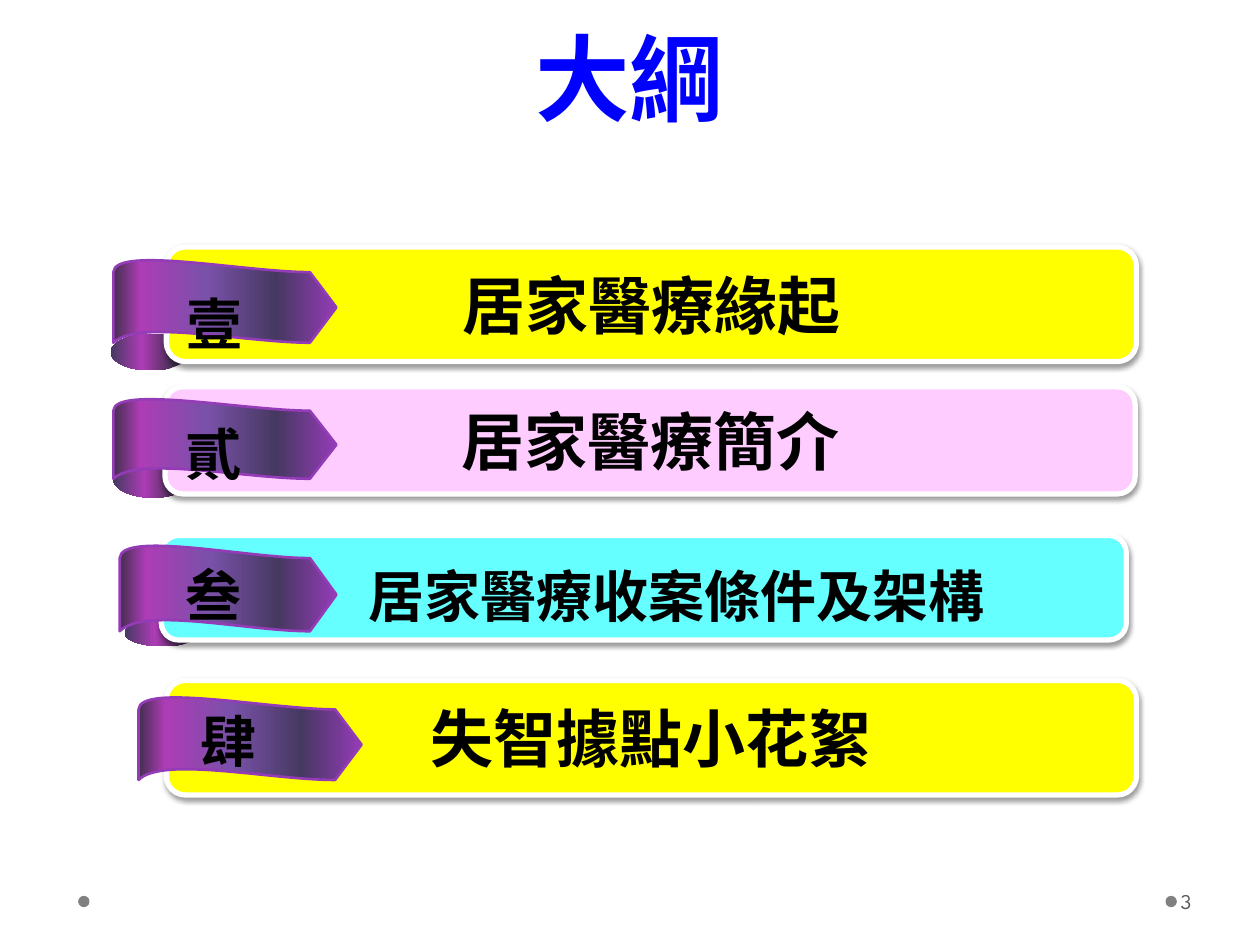
from lxml import etree
from pptx import Presentation
from pptx.dml.color import RGBColor
from pptx.enum.shapes import MSO_SHAPE as Preset
from pptx.enum.text import MSO_ANCHOR as Anchor, MSO_AUTO_SIZE as AutoSize, PP_ALIGN as Align
from pptx.oxml.ns import qn
from pptx.util import Inches, Pt

COLORS = {
    "title": "0000FF", "text": "000000", "page": "595959", "dot": "808080",
    "yellow": "FFFF00", "pink": "FFCCFF", "cyan": "66FFFF", "edge": "FFFFFF",
    "ribbon_edge": "943BB7",
}
CURL_STOPS = [(21, "432E4E"), (61, "AD3CB6"), (100, "463961")]
RIBBON_STOPS = [(0, "943BB7"), (27, "463961"), (58, "7951A9"),
                (88, "AD3CB6"), (100, "432E4E")]
CJK_FONT = "Noto Sans CJK SC"
CREST = 0.09

TOPICS = [
    dict(heading="居家醫療緣起", color="yellow", bar=(1.32, 1.96, 7.7, 0.91),
         curl=(0.88, 2.65, 0.63, 0.29), ribbon=(0.9, 2.07, 1.77, 0.65),
         numeral="壹", label=(1, 2.09, 1.41, 0.8)),
    dict(heading="居家醫療簡介", color="pink", bar=(1.31, 3.07, 7.7, 0.85),
         curl=(0.9, 3.66, 0.63, 0.29), ribbon=(0.9, 3.17, 1.77, 0.63),
         numeral="貳", label=(1.26, 3.12, 0.87, 0.8)),
    dict(heading="", color="cyan", bar=(1.28, 4.25, 7.66, 0.83),
         curl=(0.99, 4.92, 0.6, 0.21), ribbon=(0.95, 4.34, 1.72, 0.67),
         numeral="叁", label=(1.26, 4.24, 0.87, 0.8)),
    dict(heading="失智據點小花絮", color="yellow", bar=(1.32, 5.4, 7.7, 0.91),
         curl=None, ribbon=(1.1, 5.54, 1.77, 0.65),
         numeral="肆", label=(1.11, 5.4, 1.41, 0.73)),
]


def rgb(name):
    return RGBColor.from_string(COLORS[name])


def write(frame, text, size, color="text", font=CJK_FONT, bold=True,
          align=Align.CENTER, anchor=Anchor.TOP, wrap=True, spacing=None):
    frame.word_wrap = wrap
    frame.vertical_anchor = anchor
    frame.text = text
    paragraph = frame.paragraphs[0]
    paragraph.alignment = align
    if spacing:
        paragraph.line_spacing = spacing
    for run in paragraph.runs:
        run.font.size = Pt(size)
        run.font.bold = bold
        run.font.name = font
        run.font.color.rgb = rgb(color)
        east_asian = etree.SubElement(run.font._element, qn("a:ea"))
        east_asian.set("typeface", font)


def add_text(slide, box, text, size, grow=False, **style):
    frame = slide.shapes.add_textbox(*map(Inches, box)).text_frame
    write(frame, text, size, **style)
    if grow:
        frame.auto_size = AutoSize.SHAPE_TO_FIT_TEXT
    return frame


def add_preset(slide, preset, box):
    shape = slide.shapes.add_shape(preset, *map(Inches, box))
    shape.shadow.inherit = False
    shape.line.fill.background()
    return shape


def fill_gradient(shape, stops):
    shape.fill.gradient()
    shape.fill.gradient_angle = 180
    stop_list = shape._element.spPr.find(".//" + qn("a:gsLst"))
    for old_stop in list(stop_list):
        stop_list.remove(old_stop)
    for percent, color in stops:
        stop = etree.SubElement(stop_list, qn("a:gs"), pos=str(percent * 1000))
        etree.SubElement(stop, qn("a:srgbClr"), val=color)


def drop_shadow(shape):
    effects = shape._element.spPr.find(qn("a:effectLst"))
    shadow = etree.SubElement(
        effects, qn("a:outerShdw"), blurRad=str(Pt(3.1)), dist=str(Pt(1.6)),
        dir="5400000", rotWithShape="0")
    color = etree.SubElement(shadow, qn("a:srgbClr"), val=COLORS["text"])
    etree.SubElement(color, qn("a:alpha"), val="38000")


def add_dot(slide, left):
    dot = add_preset(slide, Preset.OVAL, (left, 7.11, 0.09, 0.09))
    dot.fill.solid()
    dot.fill.fore_color.rgb = rgb("dot")


def add_bar(slide, topic):
    if topic["curl"]:
        curl = add_preset(slide, Preset.OVAL, topic["curl"])
        fill_gradient(curl, CURL_STOPS)
    bar = add_preset(slide, Preset.ROUNDED_RECTANGLE, topic["bar"])
    bar.fill.solid()
    bar.fill.fore_color.rgb = rgb(topic["color"])
    bar.line.color.rgb = rgb("edge")
    bar.line.width = Pt(3)
    drop_shadow(bar)
    if topic["heading"]:
        write(bar.text_frame, topic["heading"], 36, anchor=Anchor.MIDDLE)


def bend_edge(segment, *points):
    curve = etree.Element(qn("a:cubicBezTo"))
    for x, y in points:
        etree.SubElement(curve, qn("a:pt"), x=str(Inches(x)), y=str(Inches(y)))
    segment.getparent().replace(segment, curve)


def add_ribbon(slide, left, top, width, height):
    shoulder, bend, middle = width - 0.21, 0.59 * width, (CREST + height) / 2
    outline = [(0, CREST), (shoulder, CREST), (width, middle),
               (shoulder, height), (0, height)]
    corners = [(Inches(x), Inches(y)) for x, y in outline]
    builder = slide.shapes.build_freeform(*corners[0])
    builder.add_line_segments(corners[1:], close=True)
    ribbon = builder.convert_to_shape()
    ribbon.left, ribbon.top = Inches(left), Inches(top)
    ribbon.height = Inches(height)

    geometry = ribbon._element.spPr.find(".//" + qn("a:path"))
    geometry.set("h", str(Inches(height)))
    for corner, (x, y) in zip(geometry.iter(qn("a:pt")), corners):
        corner.set("x", str(x))
        corner.set("y", str(y))
    edges = geometry.findall(qn("a:lnTo"))
    wave = 0.38 * (height - CREST)
    bend_edge(edges[0], (0.01, CREST - wave), (bend, CREST), (shoulder, CREST))
    bend_edge(edges[3], (bend, height), (0.19, height - 0.9 * wave), (0, height))

    ribbon.shadow.inherit = False
    fill_gradient(ribbon, RIBBON_STOPS)
    ribbon.line.color.rgb = rgb("ribbon_edge")
    ribbon.line.width = Pt(1.5)


def add_marker(slide, topic):
    add_ribbon(slide, *topic["ribbon"])
    add_text(slide, topic["label"], topic["numeral"], 32, grow=True, spacing=1.3)


def add_page_number(slide):
    page = add_text(slide, (9.34, 6.95, 0.61, 0.4), "3", 12, color="page",
                    font="League Spartan", bold=False, align=Align.LEFT,
                    anchor=Anchor.MIDDLE)
    page.margin_left, page.margin_right = Inches(0.03), Inches(0.05)


def main():
    deck = Presentation()
    deck.slide_width, deck.slide_height = Inches(10), Inches(7.5)
    slide = deck.slides.add_slide(deck.slide_layouts[6])
    for left in (9.25, 0.62):
        add_dot(slide, left)
    add_text(slide, (0.5, 0.3, 9, 0.61), "大綱", 54, color="title",
             anchor=Anchor.MIDDLE)
    origin, overview, criteria, moments = TOPICS
    for topic in (overview, origin):
        add_bar(slide, topic)
    for topic in (origin, overview):
        add_marker(slide, topic)
    add_bar(slide, criteria)
    add_marker(slide, criteria)
    add_page_number(slide)
    add_text(slide, (2.8, 4.41, 5.14, 0.64), "居家醫療收案條件及架構", 32,
             grow=True, wrap=False)
    add_bar(slide, moments)
    add_marker(slide, moments)
    deck.save("out.pptx")


if __name__ == "__main__":
    main()
